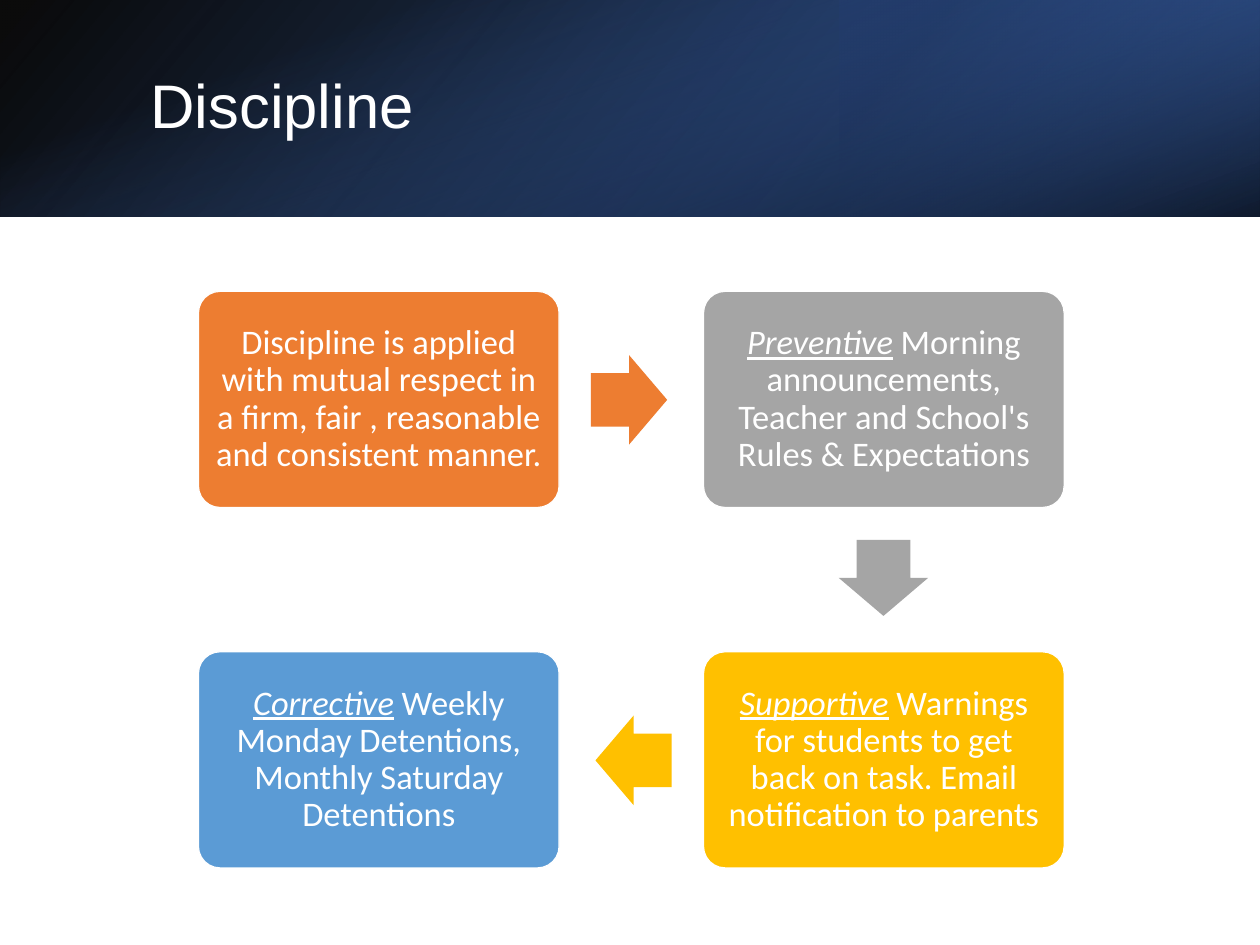
"""Build the Discipline slide: a gradient header above a four-step cycle."""
from dataclasses import dataclass

import lxml.etree
import pptx
import pptx.dml.color
import pptx.enum.shapes
import pptx.enum.text
import pptx.oxml.ns
import pptx.util

Inches = pptx.util.Inches
Shapes = pptx.enum.shapes.MSO_SHAPE
Align = pptx.enum.text.PP_ALIGN

COLORS = {
    "white": "FFFFFF",
    "black": "000000",
    "navy": "203864",
    "royal": "2F5597",
    "blue": "4472C4",
    "orange": "ED7D31",
    "gray": "A5A5A5",
    "gold": "FFC000",
    "sky": "5B9BD5",
}
SLIDE_WIDTH, SLIDE_HEIGHT = 14.22, 10.67
HEADER_HEIGHT = 2.45
CARD_WIDTH, CARD_HEIGHT = 4.07, 2.44
COLUMNS = (2.24, 7.94)
ROWS = (3.29, 7.36)
ARROW_WIDTH, ARROW_HEIGHT = 0.86, 1.01
BODY_FONT = {"name": "Calibri", "size": pptx.util.Pt(28)}
TITLE_FONT = {"name": "Arial", "size": pptx.util.Pt(50)}
EMPHASIS = {"italic": True, "underline": True}


@dataclass(frozen=True)
class Stop:
    position: float
    color: str
    opacity: int


@dataclass(frozen=True)
class Band:
    left: float
    top: float
    width: float
    height: float
    rotation: int
    flipped: bool
    angle: int
    stops: tuple[Stop, Stop]


@dataclass(frozen=True)
class Card:
    column: int
    row: int
    color: str
    lead: str
    text: str


@dataclass(frozen=True)
class Arrow:
    left: float
    top: float
    rotation: int
    color: str


BANDS = (
    Band(0, 0, SLIDE_WIDTH, HEADER_HEIGHT, 0, True, 140,
         (Stop(0, "black", 96), Stop(1, "royal", 100))),
    Band(SLIDE_WIDTH * 2 / 3, 0, SLIDE_WIDTH / 3, HEADER_HEIGHT, 180, True, 320,
         (Stop(0.19, "navy", 68), Stop(1, "blue", 79))),
    Band((SLIDE_WIDTH - HEADER_HEIGHT) / 2, (HEADER_HEIGHT - SLIDE_WIDTH) / 2,
         HEADER_HEIGHT, SLIDE_WIDTH, 90, False, 340,
         (Stop(0.23, "blue", 0), Stop(0.99, "black", 74))),
)
CARDS = (
    Card(0, 0, "orange", "", "Discipline is applied with mutual respect in a firm, "
         "fair , reasonable and consistent manner."),
    Card(1, 0, "gray", "Preventive", " Morning announcements, "
         "Teacher and School's Rules & Expectations"),
    Card(1, 1, "gold", "Supportive", " Warnings for students to get "
         "back on task. Email notification to parents"),
    Card(0, 1, "sky", "Corrective", " Weekly Monday Detentions, "
         "Monthly Saturday Detentions"),
)
ARROWS = (
    Arrow(6.67, 4.01, 0, "orange"),
    Arrow(9.54, 6.02, 90, "gray"),
    Arrow(6.72, 8.08, 180, "gold"),
)


def rgb(name: str) -> pptx.dml.color.RGBColor:
    return pptx.dml.color.RGBColor.from_string(COLORS[name])


def add_shape(slide, kind, left: float, top: float, width: float, height: float):
    shape = slide.shapes.add_shape(
        kind, Inches(left), Inches(top), Inches(width), Inches(height))
    shape.shadow.inherit = False
    shape.line.fill.background()
    return shape


def fill_solid(shape, color: str) -> None:
    shape.fill.solid()
    shape.fill.fore_color.rgb = rgb(color)


def format_frame(frame, margin: float, alignment) -> None:
    settings = {
        "word_wrap": True,
        "vertical_anchor": pptx.enum.text.MSO_ANCHOR.MIDDLE,
    }
    for side in ("left", "right", "top", "bottom"):
        settings[f"margin_{side}"] = Inches(margin)
    for name, value in settings.items():
        setattr(frame, name, value)
    paragraph = frame.paragraphs[0]
    paragraph.alignment = alignment
    paragraph.line_spacing = 0.9


def add_run(paragraph, text: str, settings: dict) -> None:
    run = paragraph.add_run()
    run.text = text
    for name, value in settings.items():
        setattr(run.font, name, value)
    run.font.color.rgb = rgb("white")


def draw_band(slide, band: Band) -> None:
    shape = add_shape(slide, Shapes.RECTANGLE,
                      band.left, band.top, band.width, band.height)
    shape.rotation = band.rotation
    properties = shape.element.spPr
    if band.flipped:
        properties.xfrm.set("flipH", "1")
    shape.fill.gradient()
    shape.fill.gradient_angle = 360 - band.angle
    for gradient_stop, stop in zip(shape.fill.gradient_stops, band.stops):
        gradient_stop.position = stop.position
        gradient_stop.color.rgb = rgb(stop.color)
    qualified = pptx.oxml.ns.qn
    for color, stop in zip(properties.iter(qualified("a:srgbClr")), band.stops):
        alpha = lxml.etree.SubElement(color, qualified("a:alpha"))
        alpha.set("val", str(stop.opacity * 1000))


def draw_title(slide, text: str) -> None:
    box = slide.shapes.add_textbox(
        Inches(1.6), Inches(0.54), Inches(11.72), Inches(1.37))
    format_frame(box.text_frame, 0.1, Align.LEFT)
    add_run(box.text_frame.paragraphs[0], text, TITLE_FONT)


def draw_card(slide, card: Card) -> None:
    shape = add_shape(slide, Shapes.ROUNDED_RECTANGLE, COLUMNS[card.column],
                      ROWS[card.row], CARD_WIDTH, CARD_HEIGHT)
    shape.adjustments[0] = 0.1
    fill_solid(shape, card.color)
    shape.line.color.rgb = rgb("white")
    shape.line.width = pptx.util.Pt(1)
    format_frame(shape.text_frame, 0.12, Align.CENTER)
    paragraph = shape.text_frame.paragraphs[0]
    if card.lead:
        add_run(paragraph, card.lead, BODY_FONT | EMPHASIS)
    add_run(paragraph, card.text, BODY_FONT)


def draw_arrow(slide, arrow: Arrow) -> None:
    shape = add_shape(slide, Shapes.RIGHT_ARROW, arrow.left, arrow.top,
                      ARROW_WIDTH, ARROW_HEIGHT)
    shape.adjustments[0] = 0.6
    shape.adjustments[1] = 0.5
    shape.rotation = arrow.rotation
    fill_solid(shape, arrow.color)


def main() -> None:
    presentation = pptx.Presentation()
    presentation.slide_width = Inches(SLIDE_WIDTH)
    presentation.slide_height = Inches(SLIDE_HEIGHT)
    slide = presentation.slides.add_slide(presentation.slide_layouts[6])
    for band in BANDS:
        draw_band(slide, band)
    draw_title(slide, "Discipline")
    for card in CARDS:
        draw_card(slide, card)
    for arrow in ARROWS:
        draw_arrow(slide, arrow)
    presentation.save("out.pptx")


if __name__ == "__main__":
    main()
